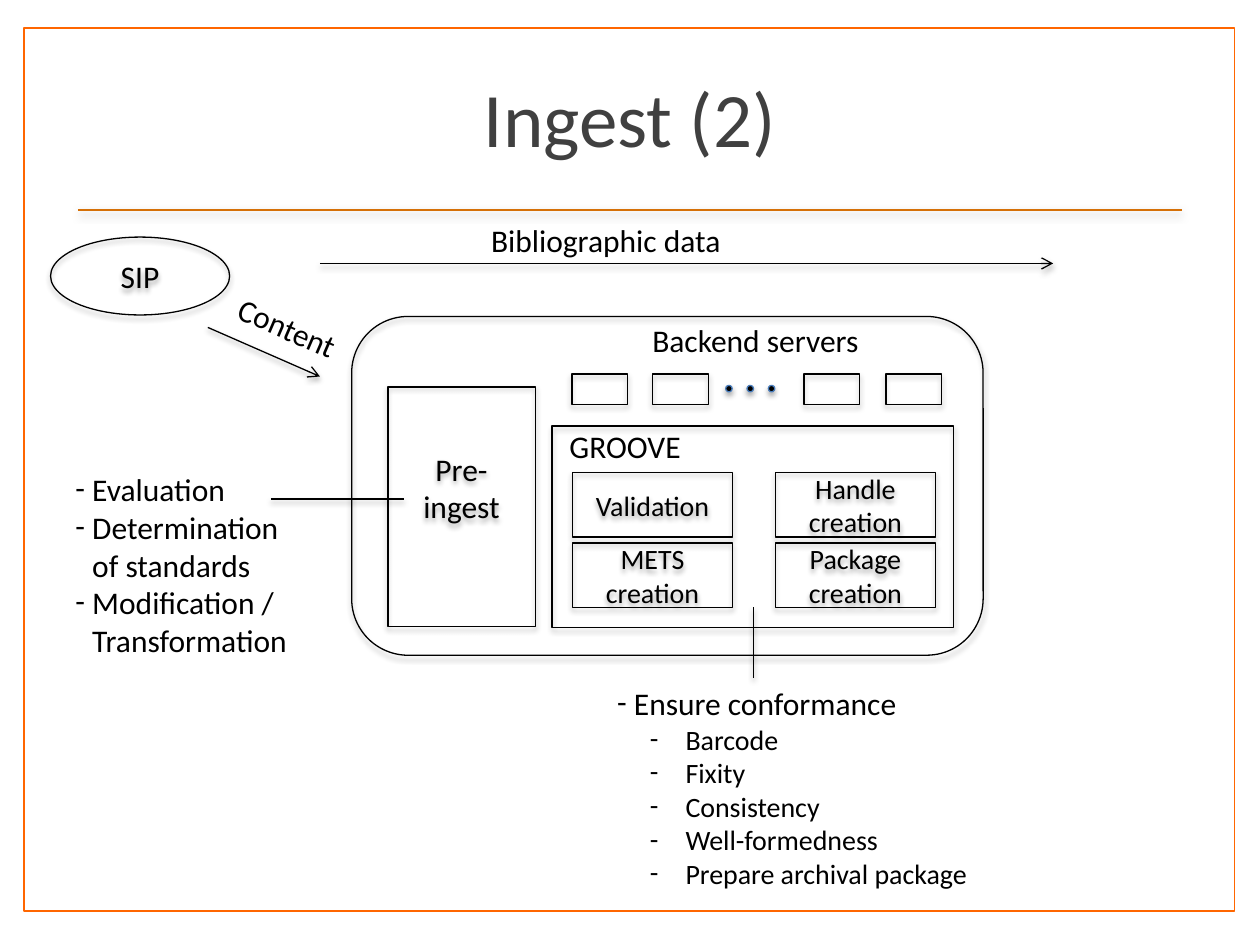
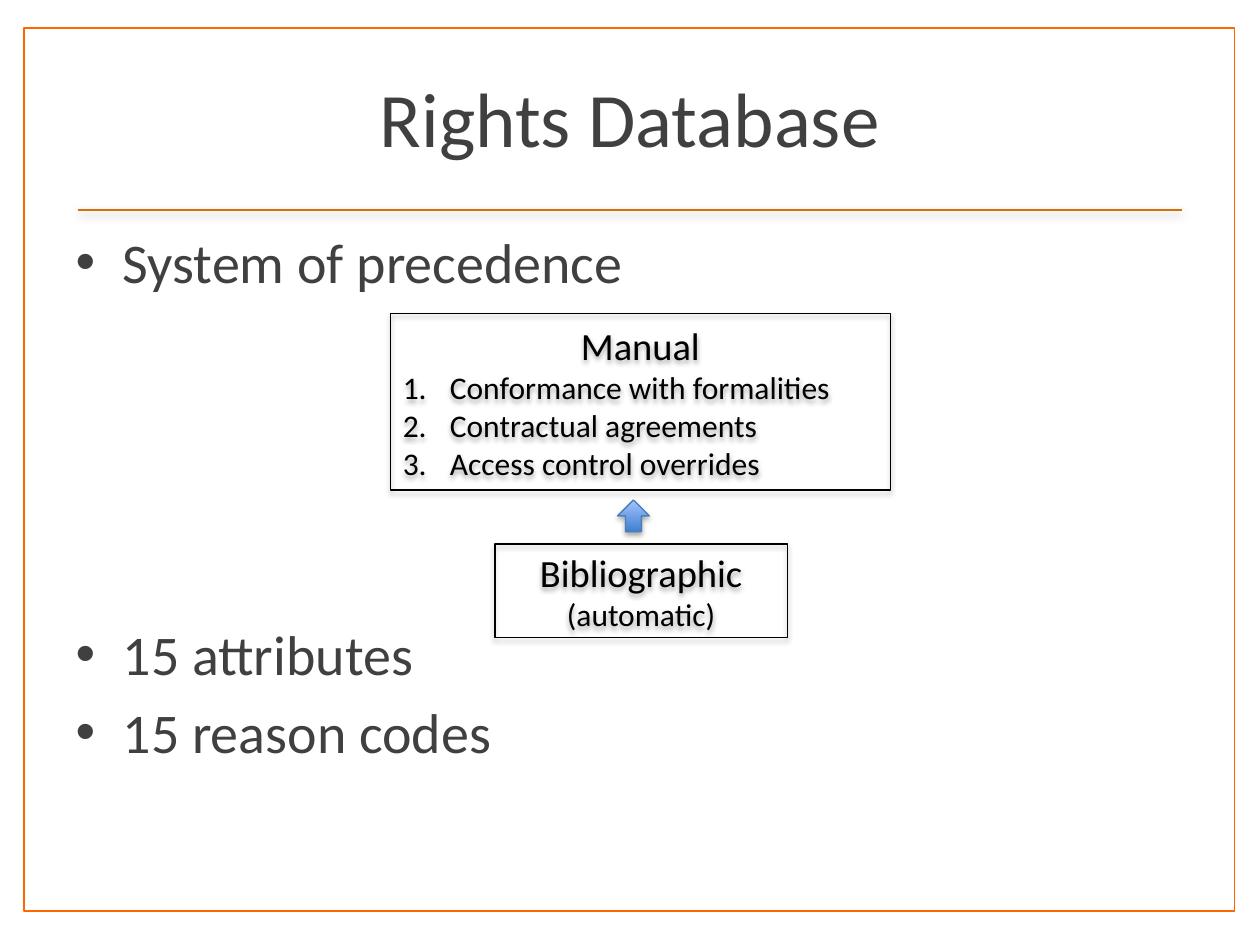
from lxml.etree import SubElement
from pptx import Presentation
from pptx.dml.color import RGBColor
from pptx.enum.shapes import MSO_CONNECTOR, MSO_SHAPE
from pptx.enum.text import MSO_ANCHOR, PP_ALIGN
from pptx.oxml.ns import qn
from pptx.util import Cm, Pt

COLORS = {
    "ink": "000000",
    "text": "404040",
    "paper": "FFFFFF",
    "frame": "FF6600",
    "rule": "D57007",
    "blue_line": "4B7EBC",
    "blue_dark": "3F80CE",
    "blue_light": "A4C4FF",
}
FONT = "Calibri"
LEFT, CENTER = PP_ALIGN.LEFT, PP_ALIGN.CENTER


def rgb(name):
    return RGBColor.from_string(COLORS[name])


def write(sp, text, size=18, color="ink", align=LEFT, bullet=None,
          margin=0, hang=0, before=0):
    """Add one paragraph; bullet is a character, or "1." for numbering."""
    tf = sp.text_frame
    p = tf.paragraphs[0] if not tf.text else tf.add_paragraph()
    pPr = p._p.get_or_add_pPr()
    pPr.set("marL", str(Cm(margin)))
    pPr.set("indent", str(Cm(-hang)))
    p.alignment = align
    p.space_before = Pt(before)
    if bullet == "1.":
        SubElement(pPr, qn("a:buFont"), typeface="+mj-lt")
        SubElement(pPr, qn("a:buAutoNum"), type="arabicPeriod")
    elif bullet:
        SubElement(pPr, qn("a:buFont"), typeface="Arial" if bullet == "•" else FONT)
        SubElement(pPr, qn("a:buChar"), char=bullet)
    else:
        SubElement(pPr, qn("a:buNone"))
    p.text = text
    for r in p.runs:
        r.font.name = FONT
        r.font.size = Pt(size)
        r.font.color.rgb = rgb(color)


def add_shadow(sp, blur=3.1, alpha=35):
    spPr = sp.element.spPr
    for old in spPr.findall(qn("a:effectLst")):
        spPr.remove(old)
    effects = SubElement(spPr, qn("a:effectLst"))
    outer = SubElement(effects, qn("a:outerShdw"), blurRad=str(Pt(blur)),
                       dist=str(Pt(1.8)), dir="5400000", rotWithShape="0")
    black = SubElement(outer, qn("a:srgbClr"), val=COLORS["ink"])
    SubElement(black, qn("a:alpha"), val=str(alpha * 1000))


def shape(slide, kind, x, y, w, h, fill=None, line="ink", width=0.75, shadow=True):
    sp = slide.shapes.add_shape(kind, Cm(x), Cm(y), Cm(w), Cm(h))
    if fill:
        sp.fill.solid()
        sp.fill.fore_color.rgb = rgb(fill)
    else:
        sp.fill.background()
    sp.line.color.rgb = rgb(line)
    sp.line.width = Pt(width)
    sp.shadow.inherit = False
    if shadow:
        add_shadow(sp)
    sp.text_frame.word_wrap = True
    sp.text_frame.vertical_anchor = MSO_ANCHOR.MIDDLE
    return sp


def box(slide, x, y, w, h, text=None, size=18, kind=MSO_SHAPE.RECTANGLE):
    sp = shape(slide, kind, x, y, w, h)
    if text:
        write(sp, text, size, align=CENTER)
    return sp


def label(slide, x, y, w, h=1.02, text=None, align=LEFT):
    sp = slide.shapes.add_textbox(Cm(x), Cm(y), Cm(w), Cm(h))
    sp.text_frame.word_wrap = True
    if text:
        write(sp, text, align=align)
    return sp


def connect(slide, x1, y1, x2, y2, color="ink", width=0.75, arrow=False,
            blur=3.1, alpha=38):
    con = slide.shapes.add_connector(MSO_CONNECTOR.STRAIGHT, Cm(x1), Cm(y1), Cm(x2), Cm(y2))
    con.line.color.rgb = rgb(color)
    con.line.width = Pt(width)
    if arrow:
        SubElement(con.element.spPr.find(qn("a:ln")), qn("a:tailEnd"), type="arrow")
    add_shadow(con, blur, alpha)
    return con


def set_up_master(prs, slide):
    """Give the master its frame, title rule and placeholder positions."""
    master = prs.slide_master
    frame = shape(slide, MSO_SHAPE.RECTANGLE, 0.48, 0.56, 24.41, 17.81,
                  fill="paper", line="frame", width=1, shadow=False)
    rule = connect(slide, 1.57, 4.24, 23.83, 4.24, "rule", 1, blur=5, alpha=35)
    tree = master.element.cSld.spTree
    for i, sp in enumerate((frame, rule)):
        tree.insert(2 + i, sp.element)
    title, body = list(master.placeholders)[:2]
    for sp, top, height in ((title, 0.76, 3.18), (body, 4.45, 13.59)):
        sp.left, sp.top = Cm(1.27), Cm(top)
        sp.width, sp.height = Cm(22.86), Cm(height)


def set_title(slide, text):
    write(slide.shapes.title, text, 44, "text", CENTER)


def groove(slide, x, y):
    box(slide, x, y, 8.1, 4.06)
    label(slide, x + 0.1, y - 0.1, 3.07, text="GROOVE")
    steps = ("Validation", "Handle creation", "METS creation", "Package creation")
    for i, step in enumerate(steps):
        row, col = divmod(i, 2)
        box(slide, x + 0.41 + 4.09 * col, y + 0.94 + 1.42 * row, 3.23, 1.3, step, 16)


def backend(slide, x, y):
    box(slide, x, y, 12.73, 6.83, kind=MSO_SHAPE.ROUNDED_RECTANGLE)
    pre_ingest = box(slide, x + 0.73, y + 1.42, 2.97, 4.83, "Pre-ingest")
    pre_ingest.text_frame.margin_bottom = Cm(0.9)
    label(slide, x + 5.81, y - 0.03, 4.95, text="Backend servers")
    for left in (4.44, 6.07, 9.12, 10.77):
        box(slide, x + left, y + 1.16, 1.12, 0.61)
    for i in range(3):
        shape(slide, MSO_SHAPE.OVAL, x + 7.54 + 0.43 * i, y + 1.39, 0.13, 0.13,
              fill="ink", line="blue_line")
    groove(slide, x + 4.04, y + 2.21)


def sources(slide, x, y):
    """Draw the SIP and the two flows that leave it."""
    box(slide, x, y, 3.61, 1.57, "SIP", kind=MSO_SHAPE.OVAL)
    connect(slide, x + 5.43, y + 0.53, x + 20.21, y + 0.53, arrow=True)
    label(slide, x + 8.63, y - 0.44, 6.5, text="Bibliographic data")
    connect(slide, x + 3.17, y + 1.82, x + 5.43, y + 2.81, arrow=True)
    content = label(slide, x + 3.27, y + 1.31, 3, text="Content", align=CENTER)
    content.rotation = 23.5


def pre_ingest_notes(slide, x, y):
    sp = label(slide, x, y, 5.18, 4.88)
    for text in ("Evaluation", "Determination\vof standards", "Modification /\vTransformation"):
        write(sp, text, bullet="-", margin=0.34, hang=0.34)
    connect(slide, x + 4.19, y + 0.71, x + 6.88, y + 0.71)


def groove_notes(slide, x, y):
    sp = label(slide, x, y, 9.04, 5.21)
    write(sp, "Ensure conformance", bullet="-", margin=0.34, hang=0.34)
    for text in ("Barcode", "Fixity", "Consistency", "Well-formedness",
                 "Prepare archival package"):
        write(sp, text, 16, bullet="-", margin=1.38, hang=0.72)
    connect(slide, x + 3, y - 1.43, x + 3, y)


def precedence(slide, x, y):
    manual = box(slide, x, y, 10.08, 3.56, "Manual", 22)
    for text in ("Conformance with formalities", "Contractual agreements",
                 "Access control overrides"):
        write(manual, text, bullet="1.", margin=0.95, hang=0.95)
    automatic = box(slide, x + 2.11, y + 4.65, 5.89, 1.88, "Bibliographic", 22)
    write(automatic, "(automatic)", align=CENTER)
    arrow = shape(slide, MSO_SHAPE.UP_ARROW, x + 4.58, y + 3.76, 0.64, 0.64, line="blue_line")
    arrow.fill.gradient()
    arrow.fill.gradient_angle = 90
    for stop, color in zip(arrow.fill.gradient_stops, ("blue_dark", "blue_light")):
        stop.color.rgb = rgb(color)


def ingest_slide(slide):
    set_title(slide, "Ingest (2)")
    backend(slide, 7.09, 6.38)
    sources(slide, 1.02, 4.78)
    pre_ingest_notes(slide, 1.27, 9.35)
    groove_notes(slide, 12.19, 13.67)


def rights_slide(slide):
    set_title(slide, "Rights Database")
    body = slide.placeholders[1]
    items = (("System of precedence", 0), ("15 attributes", 186), ("15 reason codes", 6))
    for text, before in items:
        write(body, text, 32, "text", bullet="•", margin=0.95, hang=0.95, before=before)
    precedence(slide, 7.87, 6.32)


def main():
    prs = Presentation()
    prs.slide_width, prs.slide_height = Cm(25.4), Cm(19.05)
    ingest = prs.slides.add_slide(prs.slide_layouts[5])
    set_up_master(prs, ingest)
    ingest_slide(ingest)
    rights_slide(prs.slides.add_slide(prs.slide_layouts[1]))
    prs.save("out.pptx")


if __name__ == "__main__":
    main()
